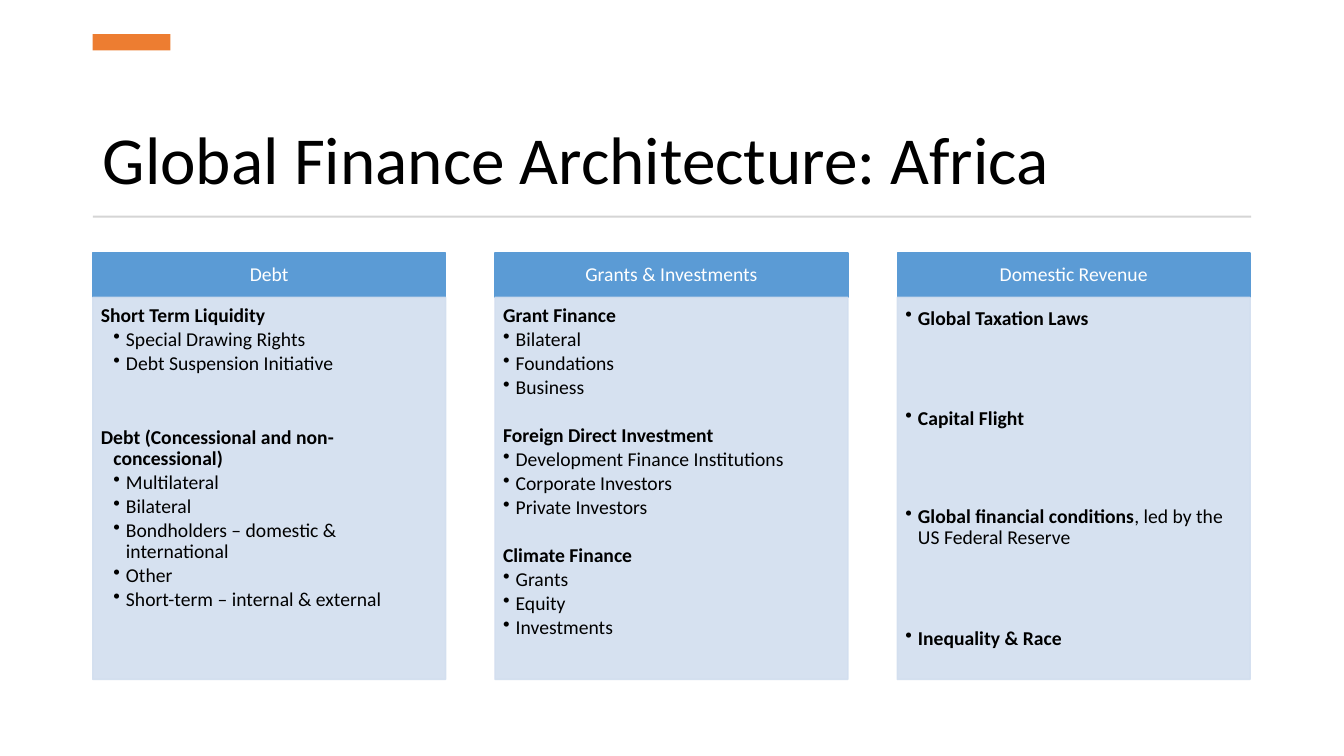
from dataclasses import dataclass

from lxml.etree import SubElement
from pptx import Presentation
from pptx.dml.color import RGBColor
from pptx.enum.shapes import MSO_SHAPE
from pptx.enum.text import MSO_ANCHOR, PP_ALIGN
from pptx.oxml.ns import qn
from pptx.util import Inches, Pt

FONT = "Calibri"
BLACK, WHITE = "000000", "FFFFFF"
ORANGE, GRAY, BLUE, PALE_BLUE = "ED7D31", "D5D5D5", "5B9BD5", "D2DEEF"
LEFT, CONTENT_WIDTH = 0.92, 11.49
COLUMN_WIDTH, COLUMN_STEP = 3.5, 3.99
HEADER_TOP, HEADER_HEIGHT = 2.51, 0.44
BODY_TOP, BODY_HEIGHT = 2.95, 3.79
INDENT = 0.125


@dataclass
class Entry:
    text: str
    bold: bool = False
    bullet: bool = True
    depth: int = 1
    space_before: float = 0
    line_spacing: float = 0.9
    plain_ending: str = ""


@dataclass
class Column:
    heading: str
    entries: list[Entry]


def group(heading: str, items: list[str], depth: int = 1, space_before: float = 0) -> list[Entry]:
    return [Entry(heading, bold=True, bullet=False, space_before=space_before)] + [
        Entry(item, depth=depth) for item in items
    ]


COLUMNS = [
    Column(
        "Debt",
        group("Short Term Liquidity", ["Special Drawing Rights", "Debt Suspension Initiative"], 2)
        + group(
            "Debt (Concessional and non-concessional)",
            [
                "Multilateral",
                "Bilateral",
                "Bondholders – domestic & international",
                "Other",
                "Short-term – internal & external",
            ],
            depth=2,
            space_before=35.7,
        ),
    ),
    Column(
        "Grants & Investments",
        group("Grant Finance", ["Bilateral", "Foundations", "Business"])
        + group(
            "Foreign Direct Investment",
            ["Development Finance Institutions", "Corporate Investors", "Private Investors"],
            space_before=17.2,
        )
        + group("Climate Finance", ["Grants", "Equity", "Investments"], space_before=17.2),
    ),
    Column(
        "Domestic Revenue",
        [
            Entry("Global Taxation Laws", bold=True, line_spacing=1),
            Entry("Capital Flight", bold=True, space_before=53, line_spacing=1),
            Entry(
                "Global financial conditions",
                bold=True,
                space_before=53,
                plain_ending=", led by the US Federal Reserve",
            ),
            Entry("Inequality & Race", bold=True, space_before=53, line_spacing=1),
        ],
    ),
]


def color(value: str) -> RGBColor:
    return RGBColor.from_string(value)


def set_font(font, size: float, value: str) -> None:
    font.name = FONT
    font.size = Pt(size)
    font.color.rgb = color(value)


def add_rectangle(slide, left: float, top: float, width: float, height: float, fill: str, outlined: bool = False):
    shape = slide.shapes.add_shape(
        MSO_SHAPE.RECTANGLE, Inches(left), Inches(top), Inches(width), Inches(height)
    )
    shape.shadow.inherit = False
    shape.fill.solid()
    shape.fill.fore_color.rgb = color(fill)
    if outlined:
        shape.line.color.rgb = color(fill)
        shape.line.width = Pt(1)
    else:
        shape.line.fill.background()
    return shape


def set_opacity(shape, percent: int) -> None:
    for element in shape.element.spPr.iter(qn("a:srgbClr")):
        SubElement(element, qn("a:alpha")).set("val", str(percent * 1000))


def prepare_frame(shape, insets: tuple[float, float, float, float], anchor):
    frame = shape.text_frame
    frame.word_wrap = True
    frame.vertical_anchor = anchor
    frame.margin_left, frame.margin_top, frame.margin_right, frame.margin_bottom = map(Inches, insets)
    return frame


def write_entry(paragraph, entry: Entry) -> None:
    paragraph.alignment = PP_ALIGN.LEFT
    paragraph.level = entry.depth
    properties = paragraph._p.get_or_add_pPr()
    properties.set("marL", str(Inches(INDENT * entry.depth)))
    properties.set("indent", str(-Inches(INDENT)))
    if entry.bullet:
        SubElement(properties, qn("a:buChar")).set("char", "•")
    else:
        SubElement(properties, qn("a:buNone"))
    paragraph.line_spacing = entry.line_spacing
    paragraph.space_before = Pt(entry.space_before)
    paragraph.space_after = Pt(2)
    set_font(paragraph.font, 14, BLACK)
    for text, bold in ((entry.text, entry.bold), (entry.plain_ending, False)):
        if text:
            run = paragraph.add_run()
            run.text = text
            run.font.bold = bold


def draw_column(slide, column: Column, left: float) -> None:
    header = add_rectangle(slide, left, HEADER_TOP, COLUMN_WIDTH, HEADER_HEIGHT, BLUE, outlined=True)
    frame = prepare_frame(header, (0.11, 0.06, 0.11, 0.06), MSO_ANCHOR.MIDDLE)
    paragraph = frame.paragraphs[0]
    paragraph.text = column.heading
    paragraph.alignment = PP_ALIGN.CENTER
    paragraph.line_spacing = 0.9
    set_font(paragraph.font, 14, WHITE)

    body = add_rectangle(slide, left, BODY_TOP, COLUMN_WIDTH, BODY_HEIGHT, PALE_BLUE, outlined=True)
    set_opacity(body, 90)
    frame = prepare_frame(body, (0.08, 0.08, 0.11, 0.12), MSO_ANCHOR.TOP)
    for index, entry in enumerate(column.entries):
        write_entry(frame.add_paragraph() if index else frame.paragraphs[0], entry)


def draw_title(slide, text: str) -> None:
    title = slide.shapes.title
    title.left, title.top = Inches(LEFT), Inches(0.75)
    title.width, title.height = Inches(CONTENT_WIDTH), Inches(1.27)
    frame = prepare_frame(title, (0.1, 0.05, 0.1, 0.05), MSO_ANCHOR.BOTTOM)
    paragraph = frame.paragraphs[0]
    paragraph.text = text
    paragraph.alignment = PP_ALIGN.LEFT
    paragraph.line_spacing = 0.9
    set_font(paragraph.font, 48, BLACK)


def main() -> None:
    presentation = Presentation()
    presentation.slide_width, presentation.slide_height = Inches(13.33), Inches(7.5)
    slide = presentation.slides.add_slide(presentation.slide_layouts[5])
    draw_title(slide, "Global Finance Architecture: Africa")
    add_rectangle(slide, LEFT, 0.34, 0.77, 0.16, ORANGE)
    add_rectangle(slide, LEFT, 2.14, CONTENT_WIDTH, 0.02, GRAY)
    for index, column in enumerate(COLUMNS):
        draw_column(slide, column, LEFT + index * COLUMN_STEP)
    presentation.save("out.pptx")


if __name__ == "__main__":
    main()
